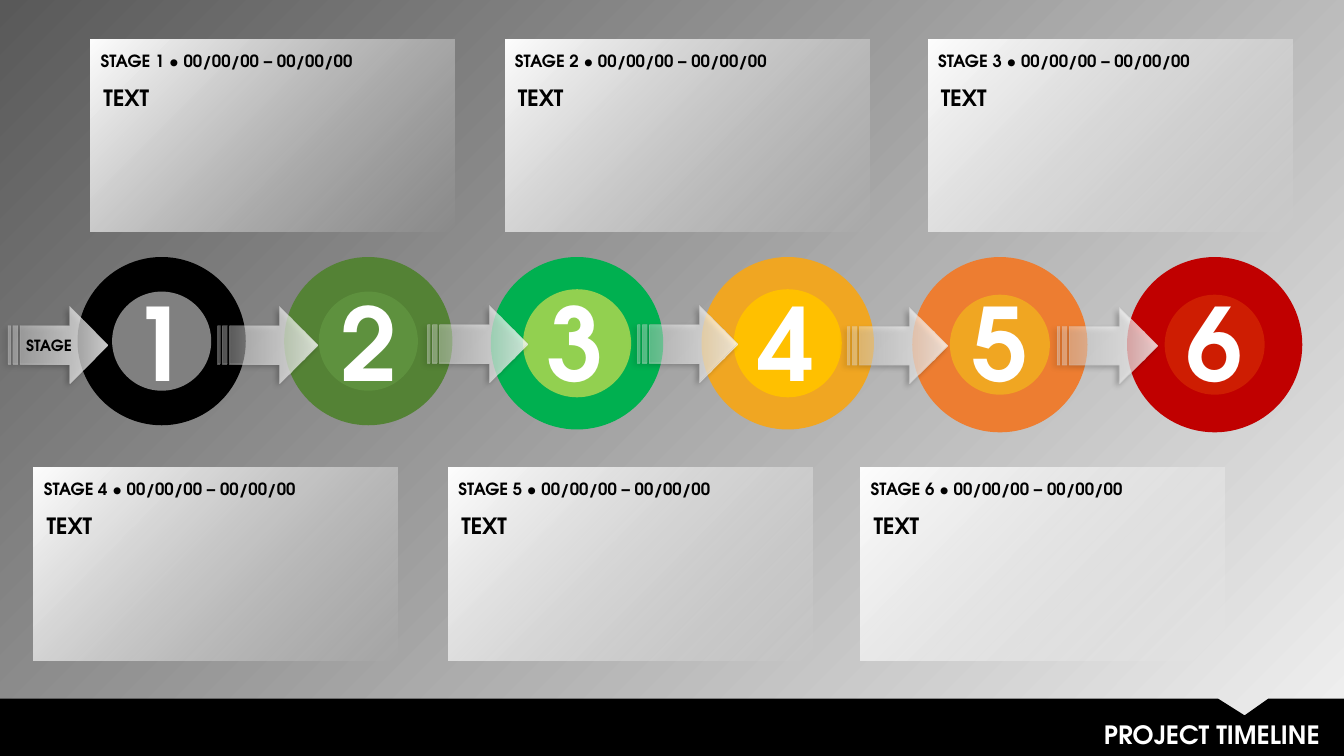
import pptx
import pptx.util
import pptx.dml.color
import pptx.enum.shapes
import pptx.enum.text
import pptx.oxml
import pptx.oxml.ns

Pt = pptx.util.Pt
KIND = pptx.enum.shapes.MSO_SHAPE
ALIGN = pptx.enum.text.PP_ALIGN
FACE = "TeX Gyre Adventor"
BLACK, WHITE = "000000", "FFFFFF"

SIZE = (960, 540)
TITLE = "PROJECT TIMELINE"
DATES = "00/00/00 – 00/00/00"
CARD = (260, 137.5)
CARDS = [(64.8, 28), (360.8, 28), (663, 28),
         (24.2, 334), (320.4, 334), (614.9, 334)]
# left, outer width, inner width, outer colour, inner colour, number left, arrow top
STAGES = [
    (55.4, 120.2, 70.8, "000000", "808080", 87.1, 218.9),
    (203, 120.2, 70.8, "548235", "5E913E", 236.2, 218.9),
    (350.6, 123.2, 77.2, "00B050", "92D050", 383.8, 218.2),
    (501.1, 123.2, 77.2, "F0A622", "FFC000", 535, 218.2),
    (651.6, 125.2, 71.4, "ED7D31", "F0A622", 687.6, 219.6),
    (805, 125.2, 71.4, "C00000", "CE1D02", 840.2, 219.6),
]
RING_TOP, NUMBER_TOP = 183.6, 196.6
ARROW_LEFT, ARROW_STEP = 5.8, 149.9
FOOTER = [(0, 499), (870.5, 499), (889.2, 511.2), (906.5, 499),
          (960, 499), (960, 540), (0, 540)]

# stops as position, colour, opacity in percent
BACK = ([(0, "F2F2F2", 40), (100, "595959", 100)], 225)
GLASS = ([(0, "F2F2F2", 0), (100, "FFFFFF", 100)], 225)
SHEEN = ([(0, "FFFFFF", 30), (100, "FFFFFF", 80)], 0)


def color(text):
    return pptx.dml.color.RGBColor.from_string(text)


def node(tag, body, attrs=""):
    """Parse one DrawingML element."""
    space = pptx.oxml.ns.nsdecls("a")
    return pptx.oxml.parse_xml(f"<a:{tag} {space} {attrs}>{body}</a:{tag}>")


def shade(blur, dist, turn, alpha):
    return node("outerShdw",
                f'<a:srgbClr val="{BLACK}"><a:alpha val="{alpha * 1000}"/></a:srgbClr>',
                f'blurRad="{Pt(blur)}" dist="{Pt(dist)}" dir="{turn * 60000}"')


def blend(fill, root, stops, turn):
    """Give the fill found under root a gradient with see-through stops."""
    fill.gradient()
    old = next(root.iter(pptx.oxml.ns.qn("a:gradFill")))
    body = "".join(
        f'<a:gs pos="{pos * 1000}"><a:srgbClr val="{tint}">'
        f'<a:alpha val="{alpha * 1000}"/></a:srgbClr></a:gs>'
        for pos, tint, alpha in stops)
    body = f'<a:gsLst>{body}</a:gsLst><a:lin ang="{turn * 60000}" scaled="0"/>'
    old.getparent().replace(old, node("gradFill", body))


def paint(shape, fill):
    """Fill with a hex colour or a gradient, without line or shadow."""
    if isinstance(fill, str):
        shape.fill.solid()
        shape.fill.fore_color.rgb = color(fill)
    else:
        blend(shape.fill, shape._element.spPr, *fill)
    shape.line.fill.background()
    shape.shadow.inherit = False
    return shape


def draw(slide, kind, box, fill):
    return paint(slide.shapes.add_shape(kind, *map(Pt, box)), fill)


def write(slide, text, box, size, tint=BLACK, align=ALIGN.LEFT):
    shape = slide.shapes.add_textbox(*map(Pt, box))
    frame = shape.text_frame
    frame.word_wrap = True
    frame.auto_size = pptx.enum.text.MSO_AUTO_SIZE.SHAPE_TO_FIT_TEXT
    para = frame.paragraphs[0]
    para.alignment = align
    run = para.add_run()
    run.text = text
    for key, value in {"size": Pt(size), "name": FACE, "bold": True}.items():
        setattr(run.font, key, value)
    run.font.color.rgb = color(tint)
    if tint == BLACK:
        glow = node("effectLst", "")
        glow.append(shade(2, 2, 45, 40))
        run.font.fill._xPr.find(pptx.oxml.ns.qn("a:solidFill")).addnext(glow)


def arrow(slide, left, top):
    shape = draw(slide, KIND.STRIPED_RIGHT_ARROW, (left, top, 71.3, 54.7), SHEEN)
    shape.line.color.rgb = color("BFBFBF")
    shape.line.width = Pt(0.25)
    props = shape._element.spPr
    tint = next(props.find(pptx.oxml.ns.qn("a:ln")).iter(pptx.oxml.ns.qn("a:srgbClr")))
    tint.append(node("alpha", "", 'val="50000"'))
    props.find(pptx.oxml.ns.qn("a:effectLst")).append(shade(4, 3, 135, 40))


def card(slide, num, left, top):
    shape = draw(slide, KIND.ROUNDED_RECTANGLE, (left, top, *CARD), GLASS)
    shape.adjustments[0] = 0
    write(slide, "TEXT", (left + 2, top + 28.5, 256.3, 26.6), 16)
    write(slide, f"STAGE {num} • {DATES}", (left, top + 4.7, 261.4, 21.8), 12)


def footer(slide):
    path = slide.shapes.build_freeform(*FOOTER[0], scale=Pt(1))
    path.add_line_segments(FOOTER[1:], close=True)
    paint(path.convert_to_shape(), BLACK)
    write(slide, TITLE, (461.5, 510, 488.2, 29), 18, WHITE, ALIGN.RIGHT)


def main():
    deck = pptx.Presentation()
    deck.slide_width, deck.slide_height = map(Pt, SIZE)
    slide = deck.slides.add_slide(deck.slide_layouts[6])
    blend(slide.background.fill, slide._element, *BACK)
    footer(slide)
    for left, outer, inner, rim, core, _, _ in STAGES:
        gap = (outer - inner) / 2
        draw(slide, KIND.OVAL, (left, RING_TOP, outer, outer), rim)
        draw(slide, KIND.OVAL, (left + gap, RING_TOP + gap, inner, inner), core)
    for num, stage in enumerate(STAGES):
        arrow(slide, ARROW_LEFT + num * ARROW_STEP, stage[6])
        write(slide, str(num + 1), (stage[5], NUMBER_TOP, 66.2, 94.3), 72, WHITE)
    write(slide, "STAGE", (11.5, 236.2, 57, 20.6), 11)
    for num, spot in enumerate(CARDS, 1):
        card(slide, num, *spot)
    deck.save("out.pptx")


if __name__ == "__main__":
    main()
